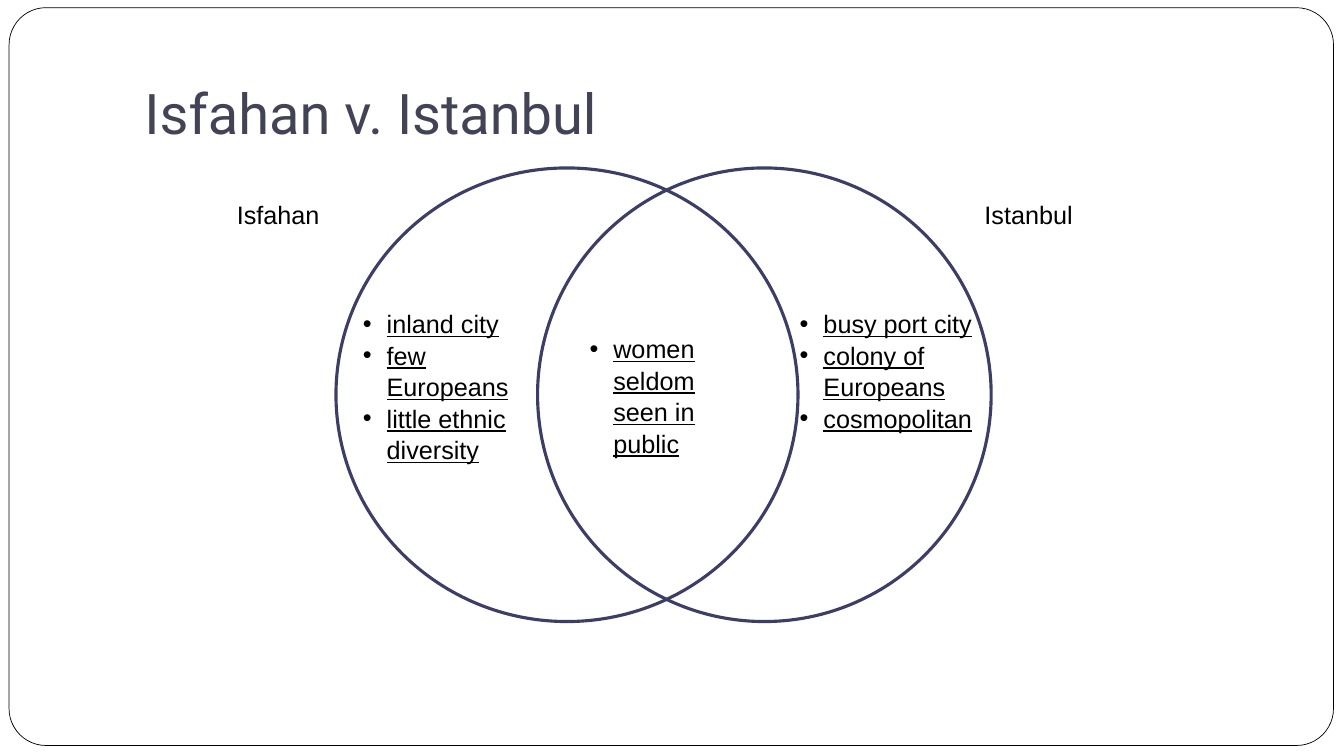
import pptx
import pptx.dml.color
import pptx.enum.shapes
import pptx.enum.text
import pptx.oxml
import pptx.oxml.ns
import pptx.util

Pt = pptx.util.Pt
SHAPE = pptx.enum.shapes.MSO_SHAPE
ANCHOR = pptx.enum.text.MSO_ANCHOR


def tint(code):
    return pptx.dml.color.RGBColor.from_string(code)


def bullet(para, indent):
    props = para._p.get_or_add_pPr()
    props.set("marL", str(Pt(indent)))
    props.set("indent", str(-Pt(indent)))
    space = pptx.oxml.ns.nsdecls("a")
    props.append(pptx.oxml.parse_xml(f'<a:buFont {space} typeface="Arial"/>'))
    props.append(pptx.oxml.parse_xml(f'<a:buChar {space} char="•"/>'))


def write(box, text, size=18, face="Arial", color="000000", line=False,
          mark=False, lead=1.04, anchor=ANCHOR.TOP, foot=3.6):
    frame = box.text_frame
    frame.text = text
    frame.word_wrap = True
    frame.auto_size = pptx.enum.text.MSO_AUTO_SIZE.NONE
    frame.vertical_anchor = anchor
    frame.margin_left = frame.margin_right = Pt(7.2)
    frame.margin_top, frame.margin_bottom = Pt(3.6), Pt(foot)
    for para in frame.paragraphs:
        para.alignment = pptx.enum.text.PP_ALIGN.LEFT
        para.line_spacing = lead
        para.space_before = para.space_after = Pt(0)
        if mark:
            bullet(para, 17)
        for run in para.runs:
            font = run.font
            font.name, font.size = face, Pt(size)
            font.bold, font.underline = False, line
            font.color.rgb = tint(color)


class Venn:
    """Draws a two-circle comparison on one slide in a single style."""

    def __init__(self, deck):
        self.ink, self.edge = "424456", "3D3E66"
        self.slide = deck.slides.add_slide(deck.slide_layouts[4])
        self.shapes = self.slide.shapes
        self.slots = {slot.placeholder_format.idx: slot
                      for slot in self.slide.placeholders}

    def place(self, slot, area):
        box = self.slots[slot]
        box.left, box.top, box.width, box.height = map(Pt, area)
        return box

    def outline(self, kind, area, color, width):
        shape = self.shapes.add_shape(kind, *map(Pt, area))
        shape.shadow.inherit = False
        shape.fill.background()
        shape.line.color.rgb = tint(color)
        shape.line.width = Pt(width)
        return shape

    def frame(self, area):
        shape = self.outline(SHAPE.ROUNDED_RECTANGLE, area, "000000", 0.5)
        shape.adjustments[0] = 0.05
        shape.fill.solid()
        shape.fill.fore_color.rgb = tint("FFFFFF")
        self.shapes.title.element.addprevious(shape.element)

    def circle(self, area):
        self.outline(SHAPE.OVAL, area, self.edge, 2.25)

    def title(self, text, area):
        write(self.place(0, area), text, size=40, face="Roboto",
              color=self.ink, lead=1, anchor=ANCHOR.BOTTOM, foot=7.2)

    def label(self, slot, text, area):
        write(self.place(slot, area), text)

    def points(self, items, area, slot=None):
        if slot is None:
            box = self.shapes.add_textbox(*map(Pt, area))
        else:
            box = self.place(slot, area)
        write(box, "\n".join(items), line=True, mark=True)


def main():
    deck = pptx.Presentation()
    deck.slide_width, deck.slide_height = Pt(960), Pt(540)
    venn = Venn(deck)
    venn.frame((6.5, 5.5, 946, 527))
    venn.title("Isfahan v. Istanbul", (96, 21.6, 816, 90))
    venn.circle((240, 120, 330, 324))
    venn.circle((384, 120, 324, 324))
    venn.label(1, "Isfahan", (162, 138, 108, 29))
    venn.label(3, "Istanbul", (696, 138, 90, 29))
    venn.points(["inland city", "few Europeans", "little ethnic diversity"],
                (252, 216, 150, 115), slot=2)
    venn.points(["busy port city", "colony of Europeans", "cosmopolitan"],
                (564, 216, 150, 94), slot=4)
    venn.points(["women seldom seen in public"], (414, 234, 126, 72))
    for idx in (10, 11, 12):
        if idx in venn.slots:
            venn.slots[idx].element.delete()
    deck.save("out.pptx")


if __name__ == "__main__":
    main()
